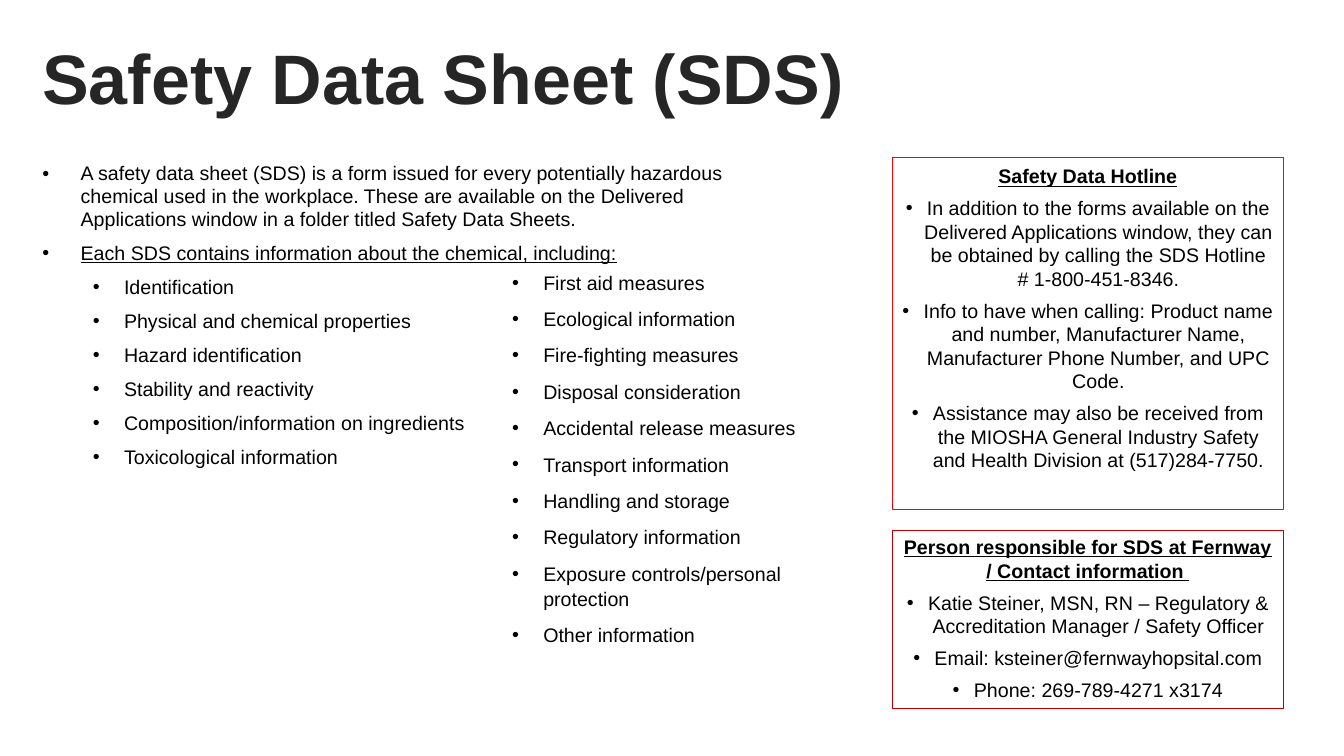
import pptx
import pptx.util
import pptx.dml.color
import pptx.enum.shapes
import pptx.enum.text
from lxml import etree
from pptx.oxml.ns import qn

Inches = pptx.util.Inches
Pt = pptx.util.Pt
ALIGN = pptx.enum.text.PP_ALIGN
ANCHOR = pptx.enum.text.MSO_ANCHOR

TITLE = "Safety Data Sheet (SDS)"
INTRO = "A safety data sheet (SDS) is a form issued for every potentially hazardous chemical used in the workplace. These are available on the Delivered Applications window in a folder titled Safety Data Sheets."
LEAD_IN = "Each SDS contains information about the chemical, including:"
LEFT_TOPICS = [
    "Identification",
    "Physical and chemical properties",
    "Hazard identification",
    "Stability and reactivity",
    "Composition/information on ingredients",
    "Toxicological information",
]
RIGHT_TOPICS = [
    "First aid measures",
    "Ecological information",
    "Fire-fighting measures",
    "Disposal consideration",
    "Accidental release measures",
    "Transport information",
    "Handling and storage",
    "Regulatory information",
    "Exposure controls/personal protection",
    "Other information",
]
PANELS = [
    {
        "top": 1.56, "height": 3.5, "inset": 0.07, "line": "FF0000",
        "heading": "Safety Data Hotline",
        "items": [
            "In addition to the forms available on the Delivered Applications window, they can be obtained by calling the SDS Hotline # 1-800-451-8346.",
            "Info to have when calling: Product name and number, Manufacturer Name, Manufacturer Phone Number, and UPC Code.",
            "Assistance may also be received from the MIOSHA General Industry Safety and Health Division at (517)284-7750.",
        ],
    },
    {
        "top": 5.26, "height": 1.77, "inset": 0.05, "line": "C00000",
        "heading": "Person responsible for SDS at Fernway / Contact information ",
        "items": [
            "Katie Steiner, MSN, RN – Regulatory & Accreditation Manager / Safety Officer",
            "Email: ksteiner@fernwayhopsital.com",
            "Phone: 269-789-4271 x3174",
        ],
    },
]
MAIN = {"margin": 0.38, "hanging": 0.38}
TOPIC = {"margin": 0.81, "hanging": 0.31, "level": 1}
PANEL_ITEM = {"margin": 0.21, "hanging": 0.21}


def color(value):
    return pptx.dml.color.RGBColor.from_string(value)


def place(shape, left, top, width, height):
    shape.left, shape.top = Inches(left), Inches(top)
    shape.width, shape.height = Inches(width), Inches(height)


def prepare(frame, anchor):
    frame.word_wrap = True
    frame.auto_size = pptx.enum.text.MSO_AUTO_SIZE.NONE
    frame.vertical_anchor = anchor


def next_para(frame):
    last = frame.paragraphs[-1]
    return frame.add_paragraph() if last.runs else last


def write(frame, text, after, spacing=1.0, align=ALIGN.LEFT, bullet=None,
          size=14, bold=False, underline=False, ink="000000"):
    para = next_para(frame)
    if bullet:
        para.level = bullet.get("level", 0)
        props = para._p.get_or_add_pPr()
        props.set("marL", str(Inches(bullet["margin"])))
        props.set("indent", str(-Inches(bullet["hanging"])))
        etree.SubElement(props, qn("a:buFont")).set("typeface", "Arial")
        etree.SubElement(props, qn("a:buChar")).set("char", "•")
    para.alignment = align
    para.line_spacing = spacing
    para.space_before = Pt(0)
    para.space_after = Pt(after)
    span = para.add_run()
    span.text = text
    span.font.name = "Arial"
    span.font.size = Pt(size)
    span.font.bold = bold
    span.font.underline = underline
    span.font.color.rgb = color(ink)


def add_panel(page, panel):
    box = page.shapes.add_shape(
        pptx.enum.shapes.MSO_SHAPE.RECTANGLE, Inches(8.85),
        Inches(panel["top"]), Inches(3.88), Inches(panel["height"]))
    box.shadow.inherit = False
    box.fill.background()
    box.line.color.rgb = color(panel["line"])
    box.line.width = Pt(0.75)
    frame = box.text_frame
    prepare(frame, ANCHOR.TOP)
    frame.margin_top = Inches(panel["inset"])
    write(frame, panel["heading"], 6, align=ALIGN.CENTER, bold=True, underline=True)
    for item in panel["items"]:
        write(frame, item, 6, align=ALIGN.CENTER, bullet=PANEL_ITEM)


def main():
    deck = pptx.Presentation()
    deck.slide_width, deck.slide_height = Inches(13.33), Inches(7.5)
    page = deck.slides.add_slide(deck.slide_layouts[1])

    title = page.shapes.title
    place(title, 0.32, 0.26, 11.67, 1.1)
    prepare(title.text_frame, ANCHOR.MIDDLE)
    write(title.text_frame, TITLE, 6, spacing=0.9, size=50, bold=True, ink="262626")

    body = page.placeholders[1]
    place(body, 0.32, 1.56, 7.25, 3.31)
    prepare(body.text_frame, ANCHOR.TOP)
    write(body.text_frame, INTRO, 8, spacing=0.97, bullet=MAIN)
    write(body.text_frame, LEAD_IN, 8, spacing=0.97, bullet=MAIN, underline=True)
    for topic in LEFT_TOPICS:
        write(body.text_frame, topic, 8, spacing=0.97, bullet=TOPIC)

    for panel in PANELS:
        add_panel(page, panel)

    column = page.shapes.add_textbox(Inches(4.48), Inches(2.62), Inches(3.88), Inches(3.87))
    prepare(column.text_frame, ANCHOR.TOP)
    for topic in RIGHT_TOPICS:
        write(column.text_frame, topic, 8, spacing=1.07, bullet=TOPIC)

    deck.save("out.pptx")


if __name__ == "__main__":
    main()
